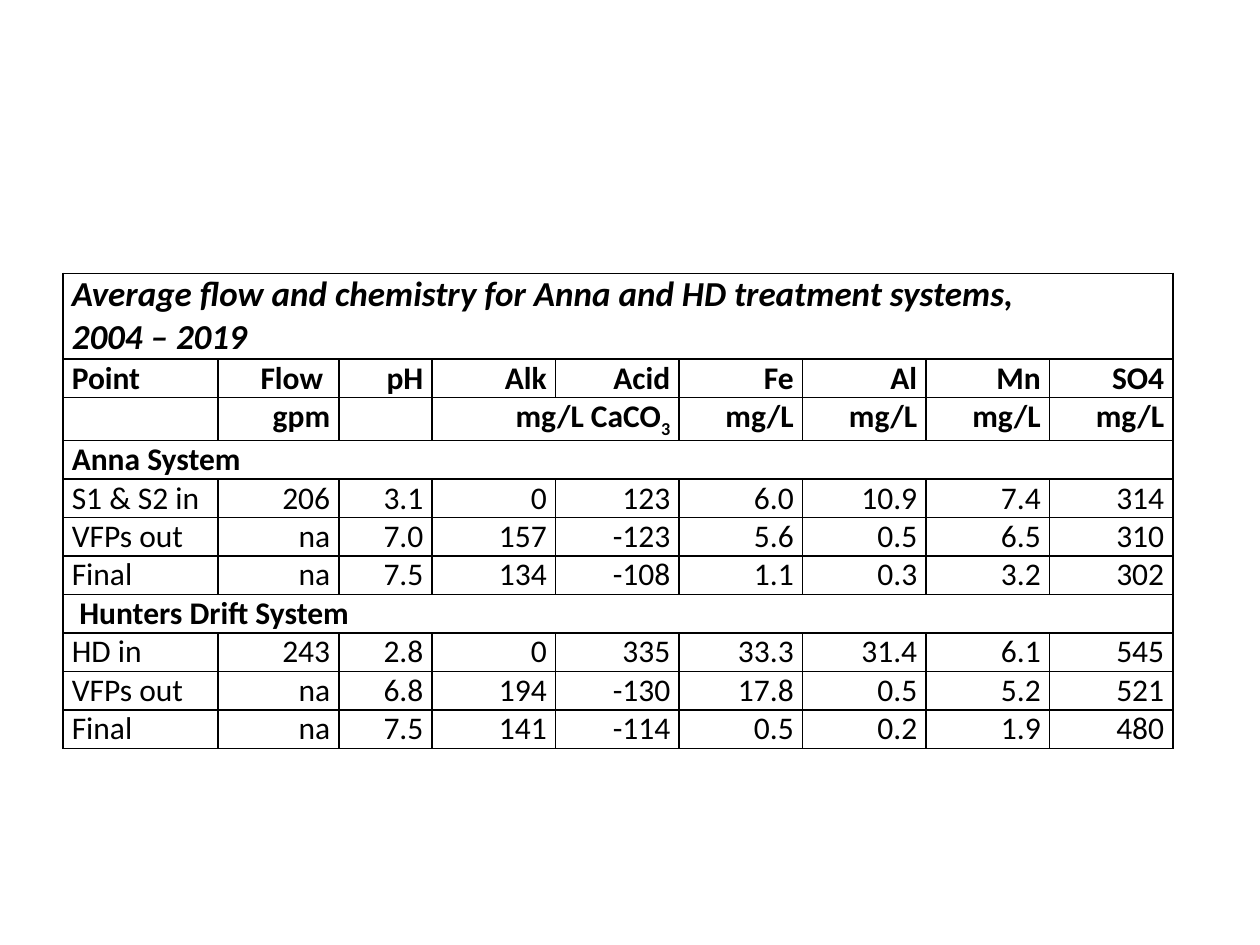
from lxml.etree import SubElement
from pptx import Presentation
from pptx.dml.color import RGBColor
from pptx.enum.text import PP_ALIGN as Align
from pptx.oxml.ns import qn
from pptx.util import Inches, Pt

FONT = "Calibri"
INK = "000000"
SIDE_INSET = 0.07
SECTION_INDENT = 0.13
COLUMN_WIDTHS = [1.23, 0.96, 0.74] + [0.98] * 6
TITLE_HEIGHT, UNITS_HEIGHT, ROW_HEIGHT = 0.67, 0.34, 0.3
TITLE_LINES = [
    "Average flow and chemistry for Anna and HD treatment systems,",
    "2004 – 2019",
]
HEADINGS = ["Point", "Flow ", "pH", "Alk", "Acid", "Fe", "Al", "Mn", "SO4"]
UNITS = ["", "gpm", "", "mg/L CaCO", "", "mg/L", "mg/L", "mg/L", "mg/L"]
SYSTEMS = [
    ("Anna System", SIDE_INSET, [
        ["S1 & S2 in", "206", "3.1", "0", "123", "6.0", "10.9", "7.4", "314"],
        ["VFPs out", "na", "7.0", "157", "-123", "5.6", "0.5", "6.5", "310"],
        ["Final", "na", "7.5", "134", "-108", "1.1", "0.3", "3.2", "302"],
    ]),
    ("Hunters Drift System", SECTION_INDENT, [
        ["HD in", "243", "2.8", "0", "335", "33.3", "31.4", "6.1", "545"],
        ["VFPs out", "na", "6.8", "194", "-130", "17.8", "0.5", "5.2", "521"],
        ["Final", "na", "7.5", "141", "-114", "0.5", "0.2", "1.9", "480"],
    ]),
]


def color(code):
    """Turn a hex string into a colour."""
    return RGBColor.from_string(code)


def add_run(paragraph, text, size=18, bold=False, italic=False):
    """Add one formatted run to a paragraph and return it."""
    run = paragraph.add_run()
    run.text = text
    run.font.name, run.font.size = FONT, Pt(size)
    run.font.bold, run.font.italic = bold, italic
    run.font.color.rgb = color(INK)
    return run


def add_borders(cell, sides):
    """Rule the named sides of a cell with a thin solid line."""
    properties = cell._tc.get_or_add_tcPr()
    for side in sides:
        line = SubElement(properties, qn(f"a:ln{side}"), w=str(Pt(1)))
        fill = SubElement(line, qn("a:solidFill"))
        SubElement(fill, qn("a:srgbClr"), val=INK)


def format_cells(table):
    """Give every cell its insets, borders and empty fill."""
    last = len(COLUMN_WIDTHS) - 1
    for row in table.rows:
        for index, cell in enumerate(row.cells):
            cell.margin_left = cell.margin_right = Inches(SIDE_INSET)
            cell.margin_top = cell.margin_bottom = 0
            inner = "RTB" if index == last else "TB"
            add_borders(cell, inner if cell.is_spanned else "LRTB")
            cell.fill.background()


def fill_row(table, row, texts, bold=False):
    """Write a row with its label on the left and its values on the right."""
    for column, text in enumerate(texts):
        paragraph = table.cell(row, column).text_frame.paragraphs[0]
        paragraph.alignment = Align.RIGHT if column else Align.LEFT
        if text:
            add_run(paragraph, text, bold=bold)


def span(table, row, first, last):
    """Merge cells of one row and return the leading cell."""
    lead = table.cell(row, first)
    lead.merge(table.cell(row, last))
    return lead


def chemistry_table(slide, left, top):
    """Build the flow and chemistry table with its corner at left, top."""
    body_rows = sum(1 + len(points) for _, _, points in SYSTEMS)
    heights = [TITLE_HEIGHT, ROW_HEIGHT, UNITS_HEIGHT] + [ROW_HEIGHT] * body_rows
    last = len(COLUMN_WIDTHS) - 1
    table = slide.shapes.add_table(
        len(heights), len(COLUMN_WIDTHS), Inches(left), Inches(top),
        Inches(sum(COLUMN_WIDTHS)), Inches(sum(heights))).table
    table.first_row = table.horz_banding = False
    for column, width in zip(table.columns, COLUMN_WIDTHS):
        column.width = Inches(width)
    for row, height in zip(table.rows, heights):
        row.height = Inches(height)

    title = span(table, 0, 0, last).text_frame
    for number, line in enumerate(TITLE_LINES):
        paragraph = title.add_paragraph() if number else title.paragraphs[0]
        add_run(paragraph, line, size=20, bold=True, italic=True)

    fill_row(table, 1, HEADINGS, bold=True)
    fill_row(table, 2, UNITS, bold=True)
    carbonate = span(table, 2, 3, 4).text_frame.paragraphs[0]
    subscript = add_run(carbonate, "3", bold=True)
    subscript._r.get_or_add_rPr().set("baseline", "-25000")

    sections = {}
    row = 3
    for system, indent, points in SYSTEMS:
        sections[row] = indent
        heading = span(table, row, 0, last).text_frame.paragraphs[0]
        add_run(heading, system, bold=True)
        for offset, point in enumerate(points, 1):
            fill_row(table, row + offset, point)
        row += 1 + len(points)

    format_cells(table)
    for row, indent in sections.items():
        table.cell(row, 0).margin_left = Inches(indent)


def main():
    """Create the one-slide deck and save it."""
    deck = Presentation()
    deck.slide_width, deck.slide_height = Inches(10), Inches(7.5)
    slide = deck.slides.add_slide(deck.slide_layouts[6])
    chemistry_table(slide, 0.5, 2.17)
    deck.save("out.pptx")


if __name__ == "__main__":
    main()
